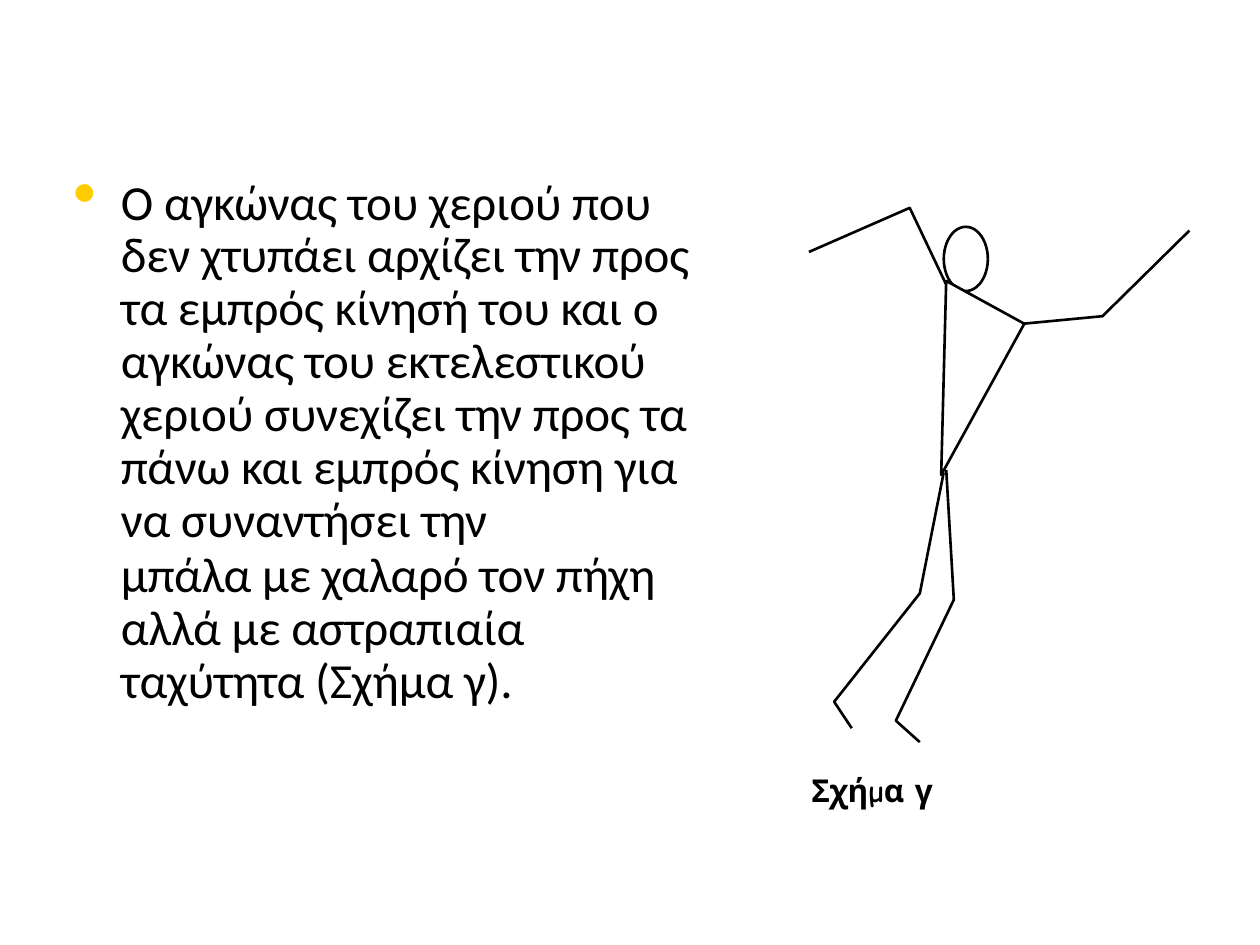
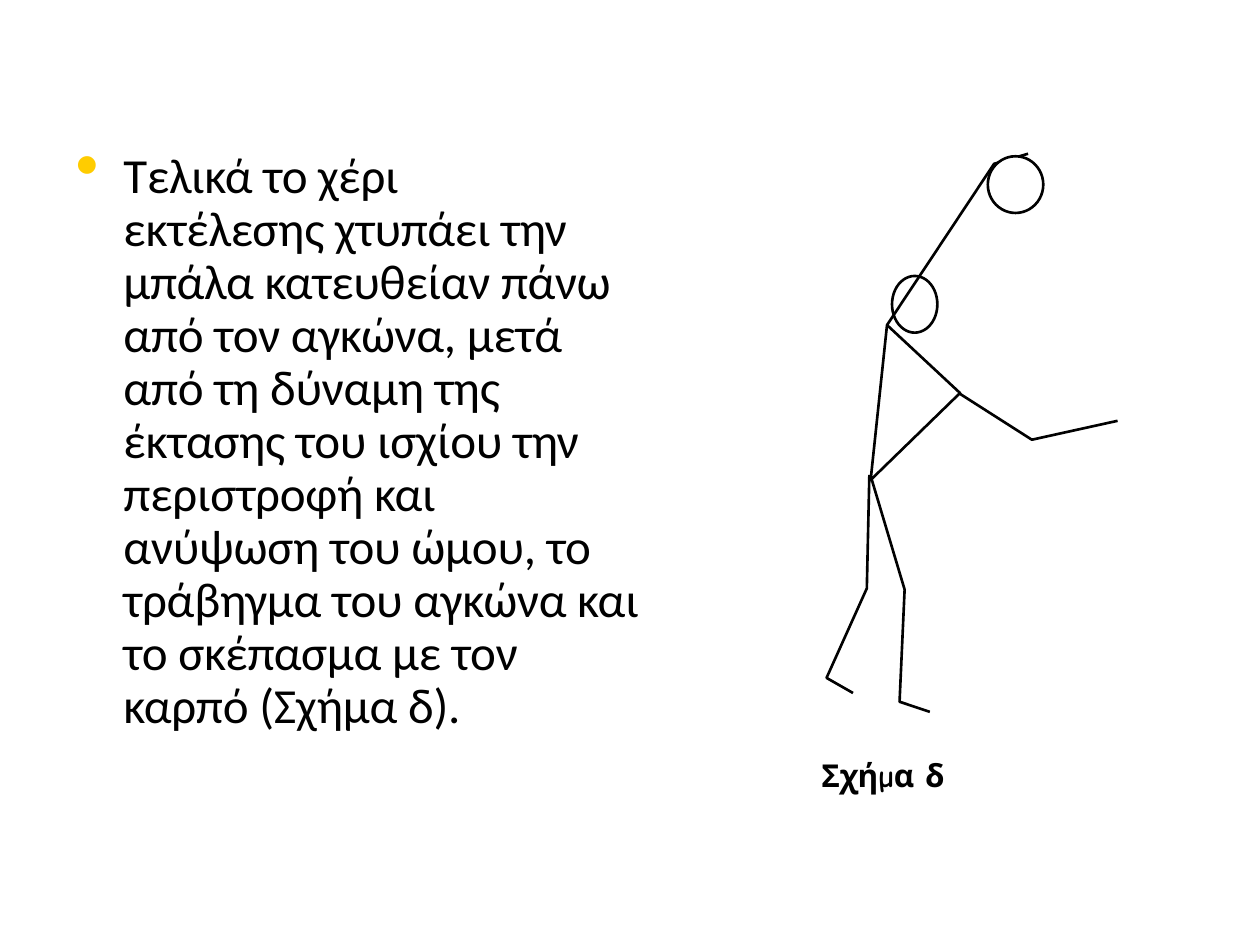
from dataclasses import dataclass
from pptx import Presentation as Deck
from pptx.dml.color import RGBColor as Rgb
from pptx.enum.shapes import MSO_SHAPE as Form
from pptx.enum.text import MSO_AUTO_SIZE as Fit
from pptx.oxml import parse_xml
from pptx.oxml.ns import nsdecls
from pptx.util import Inches, Pt


@dataclass(frozen=True)
class Theme:
    ink: Rgb = Rgb(0, 0, 0)
    line: Rgb = Rgb(1, 1, 1)
    paper: Rgb = Rgb(255, 255, 255)
    mark: str = "FFCC00"
    body: tuple = ("Calibri", Pt(28), False)
    label: tuple = ("Comic Neue", Pt(18), True)
    width: Pt = Pt(1.5)
    indent: Inches = Inches(0.39)
    hang: Inches = Inches(-0.38)


def apply(target, values):
    for name, value in values.items():
        setattr(target, name, value)


class Sheet:
    def __init__(self, deck, theme):
        self.deck, self.theme = deck, theme

    def start(self):
        self.slide = self.deck.slides.add_slide(self.deck.slide_layouts[6])

    def frame(self, spot, inset):
        frame = self.slide.shapes.add_textbox(*map(Inches, spot)).text_frame
        apply(frame, dict(word_wrap=True, auto_size=Fit.SHAPE_TO_FIT_TEXT,
                          margin_left=0, margin_right=0, margin_bottom=0,
                          margin_top=Inches(inset)))
        return frame

    def style(self, run, font, gap):
        name, size, bold = font
        apply(run.font, dict(name=name, size=size, bold=bold))
        run.font.color.rgb = self.theme.ink
        run._r.get_or_add_rPr().set("spc", str(gap))

    def bullet(self, para):
        props = para._p.get_or_add_pPr()
        props.set("indent", str(self.theme.hang))
        for part in (
            f'<a:buClr {{}}><a:srgbClr val="{self.theme.mark}"/></a:buClr>',
            '<a:buSzPct {} val="139000"/>',
            '<a:buChar {} char="•"/>',
            f'<a:tabLst {{}}><a:tab pos="{self.theme.indent}" algn="l"/></a:tabLst>',
        ):
            props.append(parse_xml(part.format(nsdecls("a"))))

    def body(self, spot, inset, paras):
        frame = self.frame(spot, inset)
        for rank, (text, pitch, before) in enumerate(paras):
            para = frame.add_paragraph() if rank else frame.paragraphs[0]
            para.text = text
            apply(para, dict(line_spacing=pitch, space_before=Pt(before)))
            para._p.get_or_add_pPr().set("marL", str(self.theme.indent))
            if not rank:
                self.bullet(para)
            for run in para.runs:
                self.style(run, self.theme.body, -10)

    def label(self, left, top, letter):
        para = self.frame((left, top, 1, 0.33), 0.01).paragraphs[0]
        para._p.get_or_add_pPr().set("marL", str(Inches(0.01)))
        for text, gap in (("Σχήµα ", -30), (letter, 0)):
            run = para.add_run()
            run.text = text
            self.style(run, self.theme.label, gap)

    def paint(self, shape, solid):
        shape.shadow.inherit = False
        if solid:
            shape.fill.solid()
            shape.fill.fore_color.rgb = self.theme.paper
        else:
            shape.fill.background()
        shape.line.color.rgb = self.theme.line
        shape.line.width = self.theme.width

    def oval(self, spot, solid=False):
        shape = self.slide.shapes.add_shape(Form.OVAL, *map(Inches, spot))
        self.paint(shape, solid)

    def limbs(self, *chains, close=False):
        pen = None
        for chain in chains:
            first, *rest = [(Inches(x), Inches(y)) for x, y in chain]
            if pen:
                pen.move_to(*first)
            else:
                pen = self.slide.shapes.build_freeform(*first)
            pen.add_line_segments(rest, close=close)
        self.paint(pen.convert_to_shape(), close)

    def trunk(self, *points):
        self.limbs(points, close=True)


def swing(sheet):
    sheet.start()
    sheet.body((0.57, 1.35, 5.08, 4.31), 0.06, [
        ("Ο αγκώνας του χεριού που δεν χτυπάει αρχίζει την προς τα εµπρός "
         "κίνησή του και ο αγκώνας του εκτελεστικού χεριού συνεχίζει την "
         "προς τα πάνω και εµπρός κίνηση για να συναντήσει την", 0.9, 0),
        ("µπάλα µε χαλαρό τον πήχη αλλά µε αστραπιαία ταχύτητα (Σχήµα γ).",
         Pt(30.3), 0.6),
    ])
    sheet.oval((7.49, 1.8, 0.35, 0.51))
    sheet.trunk((7.47, 3.77), (7.51, 2.23), (8.13, 2.57))
    sheet.limbs(
        [(7.51, 2.26), (7.22, 1.65), (6.42, 2)],
        [(8.12, 2.57), (8.75, 2.51), (9.44, 1.83)],
        [(7.51, 3.73), (7.57, 4.76), (7.11, 5.72), (7.3, 5.89)],
        [(7.49, 3.75), (7.3, 4.71), (6.62, 5.57), (6.76, 5.78)],
    )
    sheet.label(6.43, 6.11, "γ")


def strike(sheet):
    sheet.start()
    pitch = Pt(30.3)
    sheet.body((0.59, 1.12, 4.56, 4.72), 0.07, [
        ("Τελικά το χέρι\vεκτέλεσης χτυπάει την", pitch, 0),
        ("µπάλα κατευθείαν πάνω από τον αγκώνα, µετά", pitch, 0.1),
        ("από τη δύναµη της έκτασης του ισχίου την περιστροφή και\v"
         "ανύψωση του ώµου, το τράβηγµα του αγκώνα και το σκέπασµα µε τον",
         pitch, 0.1),
        ("καρπό (Σχήµα δ).", Pt(30.2), 0),
    ])
    sheet.limbs([(6.92, 3.81), (7.18, 4.68), (7.14, 5.57), (7.38, 5.65)])
    sheet.oval((7.08, 2.19, 0.36, 0.45))
    sheet.trunk((6.91, 3.81), (7.04, 2.58), (7.62, 3.12))
    sheet.limbs(
        [(7.61, 3.12), (8.19, 3.49), (8.87, 3.34)],
        [(6.9, 3.77), (6.88, 4.67), (6.56, 5.38), (6.77, 5.5)],
        [(7.04, 2.58), (7.89, 1.3), (8.16, 1.22)],
    )
    sheet.oval((7.84, 1.24, 0.44, 0.45), solid=True)
    sheet.label(6.51, 5.99, "δ")


def main():
    deck = Deck()
    apply(deck, dict(slide_width=Inches(10), slide_height=Inches(7.5)))
    sheet = Sheet(deck, Theme())
    swing(sheet)
    strike(sheet)
    deck.save("out.pptx")


if __name__ == "__main__":
    main()
